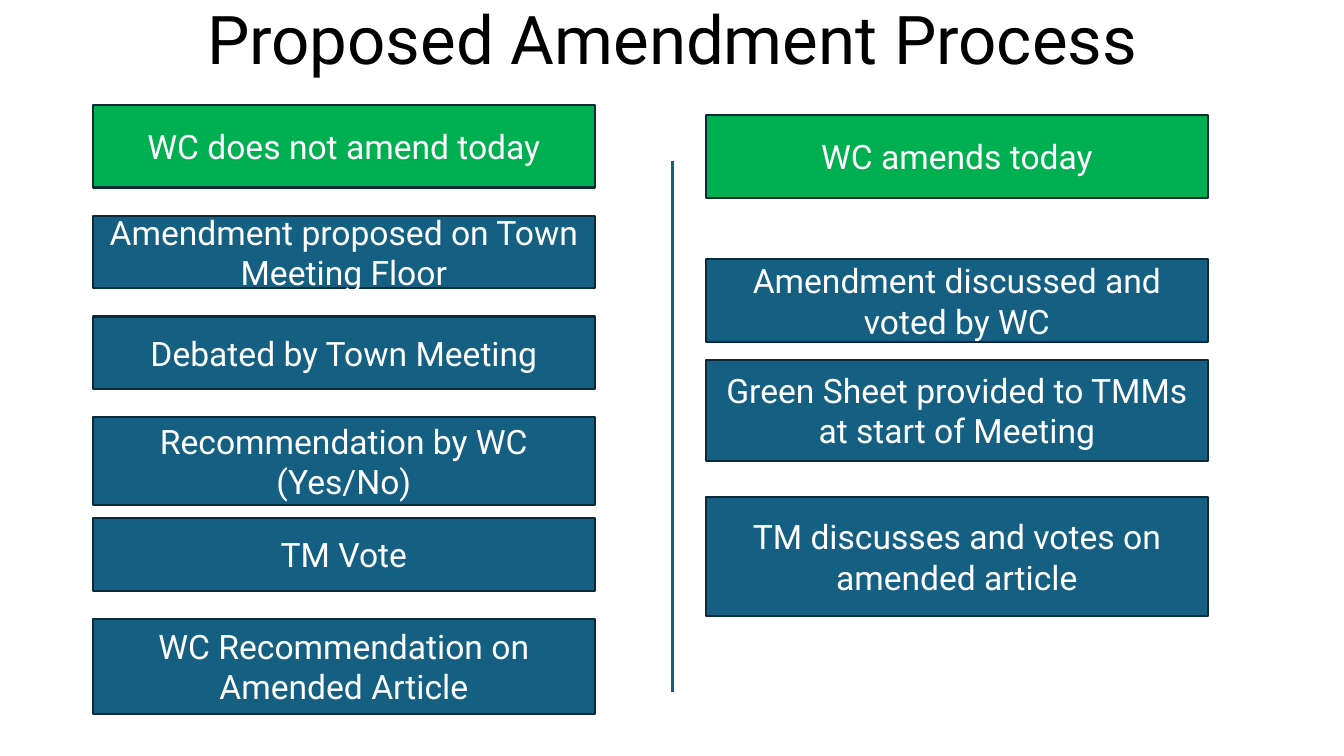
from dataclasses import dataclass

from lxml.etree import SubElement
from pptx import Presentation
from pptx.dml.color import RGBColor
from pptx.enum.shapes import MSO_CONNECTOR, MSO_SHAPE
from pptx.enum.text import MSO_ANCHOR, MSO_AUTO_SIZE, PP_ALIGN
from pptx.oxml.ns import qn
from pptx.util import Inches, Pt


@dataclass(frozen=True)
class Theme:
    font: str = "Roboto"
    title_size: int = 48
    box_size: int = 24
    line_width: float = 1.5
    ink: str = "000000"
    paper: str = "FFFFFF"
    start: str = "00B050"
    step: str = "156082"
    outline: str = "092A39"


THEME = Theme()
LEFT_X = 0.92
RIGHT_X = 7
BOX_WIDTH = 4.98
START_HEIGHT = 0.82

FLOOR_TOP = 2.14
FLOOR_PITCH = 1
FLOOR_STEPS = [
    ("Amendment proposed on Town Meeting Floor", 0.72),
    ("Debated by Town Meeting", 0.72),
    ("Recommendation by WC (Yes/No)", 0.87),
    ("TM Vote", 0.72),
    ("WC Recommendation on Amended Article", 0.94),
]
COMMITTEE_STEPS = [
    ("Amendment discussed and voted by WC", 2.57, 0.82),
    ("Green Sheet provided to TMMs at start of Meeting", 3.57, 1),
    ("TM discusses and votes on amended article", 4.93, 1.18),
]


def format_text(tf, size, color):
    tf.word_wrap = True
    tf.vertical_anchor = MSO_ANCHOR.MIDDLE
    p = tf.paragraphs[0]
    p.alignment = PP_ALIGN.CENTER
    p.font.name = THEME.font
    p.font.size = Pt(size)
    p.font.color.rgb = RGBColor.from_string(color)
    return p


def set_title(s, text):
    sp = s.shapes.title
    sp.left, sp.top = Inches(LEFT_X), Inches(0.06)
    sp.width, sp.height = Inches(11.5), Inches(0.72)
    tf = sp.text_frame
    tf.text = text
    tf.auto_size = MSO_AUTO_SIZE.NONE
    p = format_text(tf, THEME.title_size, THEME.ink)
    p.line_spacing = 0.9


def add_box(s, text, left, top, height, fill):
    sp = s.shapes.add_shape(MSO_SHAPE.RECTANGLE, Inches(left), Inches(top),
                            Inches(BOX_WIDTH), Inches(height))
    sp.shadow.inherit = False
    sp.fill.solid()
    sp.fill.fore_color.rgb = RGBColor.from_string(fill)
    sp.line.color.rgb = RGBColor.from_string(THEME.outline)
    sp.line.width = Pt(THEME.line_width)
    sp.text_frame.text = text
    format_text(sp.text_frame, THEME.box_size, THEME.paper)


def add_divider(s, x, top, bottom):
    line = s.shapes.add_connector(MSO_CONNECTOR.STRAIGHT, Inches(x), Inches(top),
                                  Inches(x), Inches(bottom))
    line.line.color.rgb = RGBColor.from_string(THEME.step)
    line.line.width = Pt(THEME.line_width)
    SubElement(line._element.spPr, qn("a:effectLst"))


def main():
    prs = Presentation()
    prs.slide_width, prs.slide_height = Inches(13.33), Inches(7.5)
    s = prs.slides.add_slide(prs.slide_layouts[5])
    set_title(s, "Proposed Amendment Process")
    add_divider(s, 6.67, 1.6, 6.87)
    for i, (text, height) in enumerate(FLOOR_STEPS):
        add_box(s, text, LEFT_X, FLOOR_TOP + i * FLOOR_PITCH, height, THEME.step)
    for text, top, height in COMMITTEE_STEPS:
        add_box(s, text, RIGHT_X, top, height, THEME.step)
    add_box(s, "WC amends today", RIGHT_X, 1.14, START_HEIGHT, THEME.start)
    add_box(s, "WC does not amend today", LEFT_X, 1.04, START_HEIGHT, THEME.start)
    prs.save("out.pptx")


if __name__ == "__main__":
    main()
